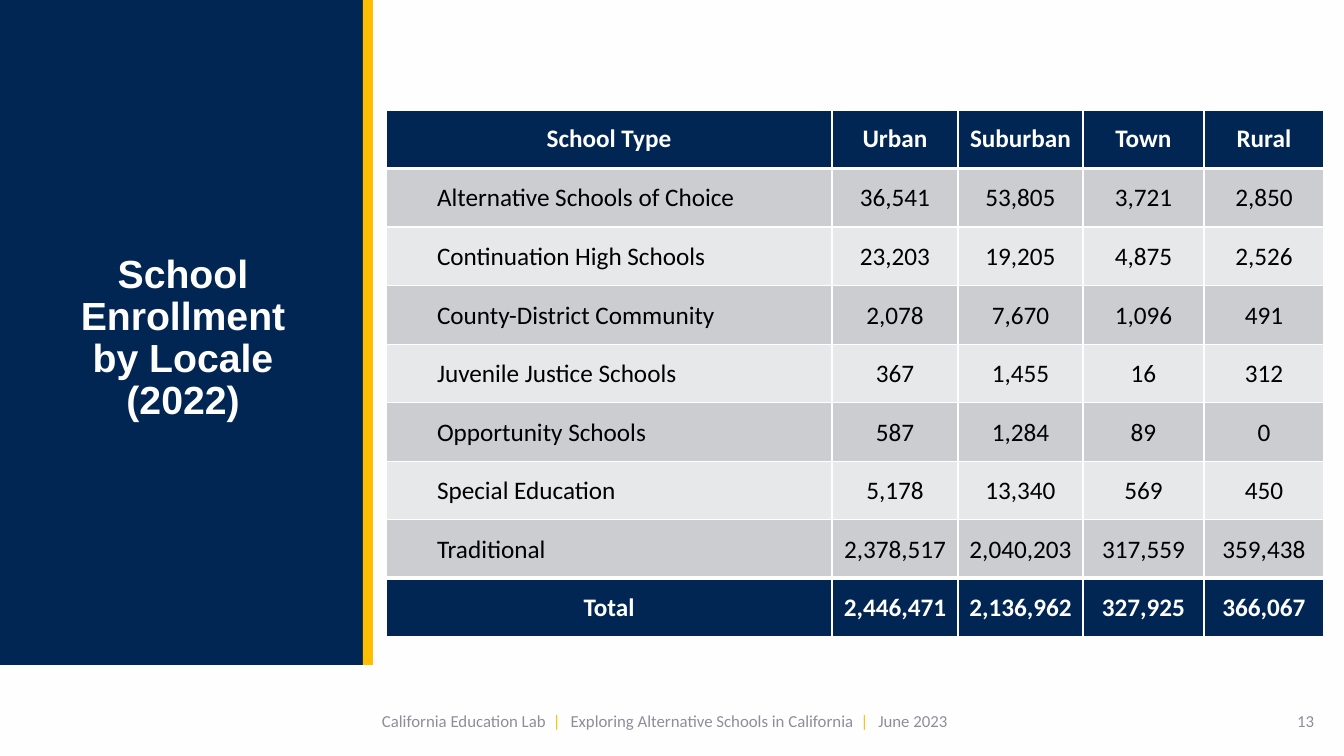
from lxml.etree import SubElement
from pptx import Presentation
from pptx.dml.color import RGBColor
from pptx.enum.shapes import MSO_SHAPE
from pptx.enum.text import MSO_ANCHOR, MSO_AUTO_SIZE, PP_ALIGN
from pptx.oxml.ns import qn
from pptx.util import Emu, Pt

NAVY = RGBColor(0x01, 0x26, 0x54)
GOLD = RGBColor(0xFF, 0xBF, 0x00)
SEPARATOR_GOLD = RGBColor(0xFD, 0xBE, 0x00)
WHITE = RGBColor(0xFF, 0xFE, 0xFF)
BLACK = RGBColor(0x00, 0x00, 0x00)
GREY = RGBColor(0x8C, 0x8E, 0x99)
BANDS = [RGBColor(0xCC, 0xCD, 0xD1), RGBColor(0xE7, 0xE8, 0xE9)]

TITLE = "School Enrollment by Locale\n(2022)"
ENROLLMENT = [
    ("School Type", "Urban", "Suburban", "Town", "Rural"),
    ("Alternative Schools of Choice", "36,541", "53,805", "3,721", "2,850"),
    ("Continuation High Schools", "23,203", "19,205", "4,875", "2,526"),
    ("County-District Community", "2,078", "7,670", "1,096", "491"),
    ("Juvenile Justice Schools", "367", "1,455", "16", "312"),
    ("Opportunity Schools", "587", "1,284", "89", "0"),
    ("Special Education", "5,178", "13,340", "569", "450"),
    ("Traditional", "2,378,517", "2,040,203", "317,559", "359,438"),
    ("Total", "2,446,471", "2,136,962", "327,925", "366,067"),
]
FOOTER = ["California Education Lab", "Exploring Alternative Schools in California", "June 2023"]
PAGE = "13"

SLIDE_SIZE = (1344, 756)
SIDE_PANELS = [((0, 0, 363, 665), NAVY), ((363, 0, 10, 665), GOLD)]
TITLE_BOX = (30, 265, 306, 147)
TABLE_BOX = (386, 110, 938, 527)
COLUMNS = (446, 126, 125, 121, 120)
FOOTER_BOX = (372, 701, 600, 40)
PAGE_BOX = (1022, 701, 302, 40)


def px(length):
    """Turn pixels into EMU."""
    return Emu(round(length * 914400 / 100.8))


def style(run, size, color, bold=False, font="Calibri"):
    """Format one run."""
    run.font.name, run.font.size, run.font.bold = font, Pt(size), bold
    run.font.color.rgb = color


def add_side_panel(slide, box, color):
    """Add one plain filled panel."""
    panel = slide.shapes.add_shape(MSO_SHAPE.RECTANGLE, *map(px, box))
    panel.shadow.inherit = False
    panel.fill.solid()
    panel.fill.fore_color.rgb = color
    panel.line.fill.background()


def add_title(slide):
    """Fill the title placeholder and lift it above the panels."""
    title = slide.shapes.title
    title.left, title.top, title.width, title.height = map(px, TITLE_BOX)
    frame = title.text_frame
    frame.text = TITLE
    frame.word_wrap, frame.auto_size = True, MSO_AUTO_SIZE.NONE
    frame.vertical_anchor = MSO_ANCHOR.MIDDLE
    frame.margin_left = frame.margin_right = px(40)
    frame.margin_top = frame.margin_bottom = 0
    for paragraph in frame.paragraphs:
        paragraph.alignment = PP_ALIGN.CENTER
        paragraph.line_spacing = Pt(30)
        style(paragraph.runs[0], 28, WHITE, True, "Arial")
    title.element.getparent().append(title.element)


def add_borders(cell, top, bottom):
    """Draw the four cell borders, with top and bottom widths in points."""
    properties = cell._tc.get_or_add_tcPr()
    for side, width in (("L", 1), ("R", 1), ("T", top), ("B", bottom)):
        line = SubElement(properties, qn(f"a:ln{side}"), w=str(Pt(width)))
        fill = SubElement(line, qn("a:solidFill"))
        SubElement(fill, qn("a:srgbClr"), val=str(WHITE))


def add_enrollment(slide):
    """Add the enrollment table."""
    last = len(ENROLLMENT) - 1
    table = slide.shapes.add_table(last + 1, len(COLUMNS), *map(px, TABLE_BOX)).table
    for column, width in zip(table.columns, COLUMNS):
        column.width = px(width)
    for r, values in enumerate(ENROLLMENT):
        strong = r in (0, last)
        for c, value in enumerate(values):
            cell = table.cell(r, c)
            cell.text = value
            cell.vertical_anchor = MSO_ANCHOR.MIDDLE
            if r:
                cell.margin_left = cell.margin_top = cell.margin_right = px(1)
                cell.margin_bottom = 0
            paragraph = cell.text_frame.paragraphs[0]
            if c or strong:
                paragraph.alignment = PP_ALIGN.CENTER
            else:
                paragraph.level = 1
                paragraph._p.get_or_add_pPr().set("marL", str(px(50)))
            style(paragraph.runs[0], 18, WHITE if strong else BLACK, strong)
            add_borders(cell, 3 if r in (1, last) else 1, 3 if r in (0, last - 1) else 1)
            cell.fill.solid()
            cell.fill.fore_color.rgb = NAVY if strong else BANDS[(r - 1) % 2]


def add_line(slide, box, alignment):
    """Add a one-line text box and return its paragraph."""
    frame = slide.shapes.add_textbox(*map(px, box)).text_frame
    frame.word_wrap = True
    frame.vertical_anchor = MSO_ANCHOR.MIDDLE
    paragraph = frame.paragraphs[0]
    paragraph.alignment = alignment
    return paragraph


def add_footer(slide):
    """Add the footer credits and the page number."""
    credits = add_line(slide, FOOTER_BOX, PP_ALIGN.LEFT)
    for index, part in enumerate(FOOTER):
        if index:
            separator = credits.add_run()
            separator.text = " | "
            style(separator, 12, SEPARATOR_GOLD)
            separator._r.get_or_add_rPr().set("spc", "220")
        credit = credits.add_run()
        credit.text = part
        style(credit, 12, GREY)
    page = add_line(slide, PAGE_BOX, PP_ALIGN.RIGHT)
    page.text = PAGE
    style(page.runs[0], 12, GREY)


def main():
    """Build and save the slide."""
    deck = Presentation()
    deck.slide_width, deck.slide_height = map(px, SLIDE_SIZE)
    slide = deck.slides.add_slide(deck.slide_layouts[5])
    slide.background.fill.solid()
    slide.background.fill.fore_color.rgb = WHITE
    for box, color in SIDE_PANELS:
        add_side_panel(slide, box, color)
    add_title(slide)
    add_enrollment(slide)
    add_footer(slide)
    deck.save("out.pptx")


if __name__ == "__main__":
    main()
